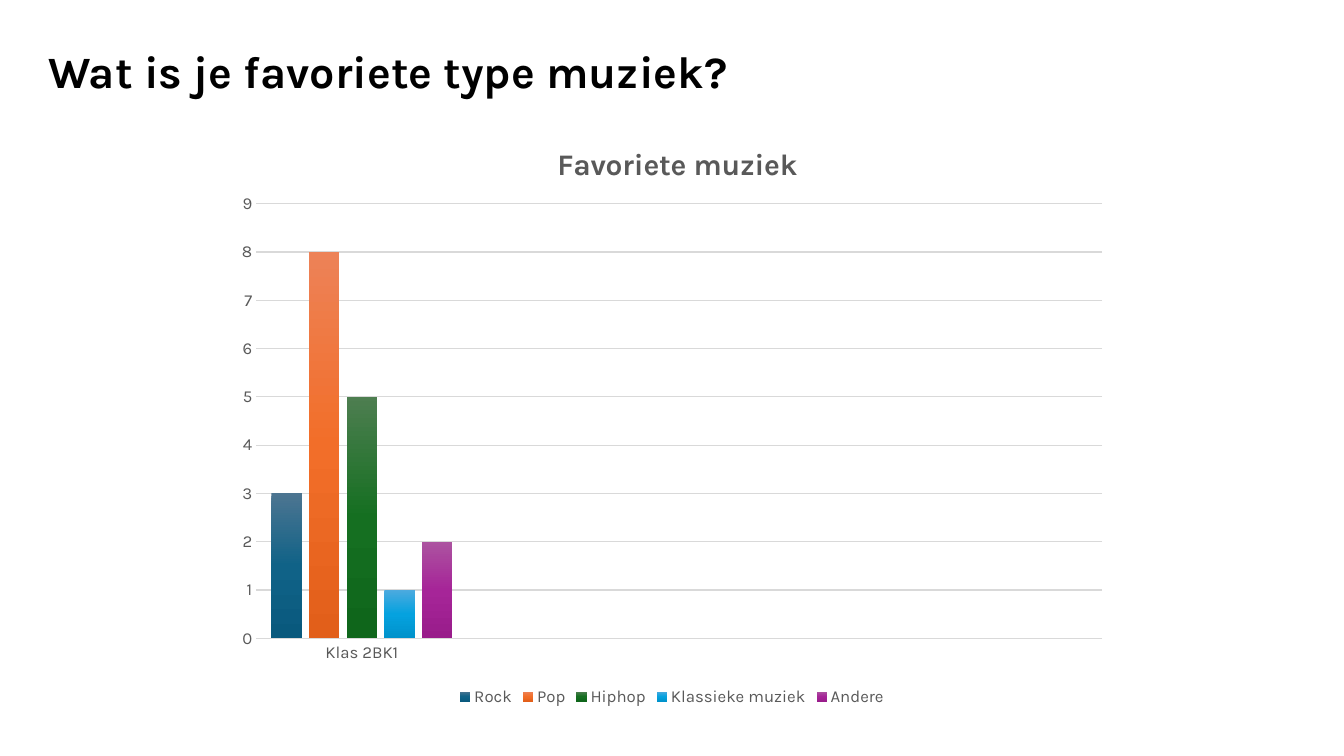
from dataclasses import dataclass
from copy import deepcopy

from lxml.etree import SubElement
from pptx import Presentation
from pptx.chart.data import CategoryChartData
from pptx.dml.color import RGBColor
from pptx.enum.chart import XL_CHART_TYPE, XL_LEGEND_POSITION, XL_TICK_MARK
from pptx.oxml.ns import qn
from pptx.util import Pt

FONT = "Karla"
COLORS = {"background": "FFFFFF", "heading": "000000", "label": "595959", "grid": "D9D9D9"}
CLASSES = ["Klas 2BK1", "", "", ""]


@dataclass(frozen=True)
class Genre:
    name: str
    votes: int
    gradient: tuple[str, str, str]


GENRES = [
    Genre("Rock", 3, ("4C7591", "106287", "09597D")),
    Genre("Pop", 8, ("ED8257", "F26E29", "E25F1A")),
    Genre("Hiphop", 5, ("4D7E50", "156F21", "0F661B")),
    Genre("Klassieke muziek", 1, ("4CAADF", "05A2DF", "0092CB")),
    Genre("Andere", 2, ("AC53A0", "A62598", "991C8B")),
]


def write(frame, text: str, *, size: float, color: str, bold: bool = False) -> None:
    run = frame.paragraphs[0].add_run()
    run.text = text
    style(run.font, size=size, color=color, bold=bold)


def style(font, *, size: float, color: str, bold: bool = False) -> None:
    font.name = FONT
    font.size = Pt(size)
    font.bold = bold
    font.color.rgb = RGBColor.from_string(COLORS[color])


def outline(line, width: float) -> None:
    line.color.rgb = RGBColor.from_string(COLORS["grid"])
    line.width = Pt(width)


def place(element, **settings: object) -> None:
    layout = element.get_or_add_layout() if hasattr(element, "get_or_add_layout") else element.find(qn("c:layout"))
    if layout is None:
        layout = element.makeelement(qn("c:layout"))
        element.insert(0, layout)
    manual = SubElement(layout, qn("c:manualLayout"))
    for tag, value in settings.items():
        SubElement(manual, qn(f"c:{tag}")).set("val", str(value))


def paint(bars, genre: Genre) -> None:
    fill = bars.format.fill
    fill.gradient()
    fill.gradient_angle = 270
    stops = bars.format.fill.gradient_stops
    first = next(bars._element.iter(qn("a:gs")))
    first.addnext(deepcopy(first))
    stops = fill.gradient_stops
    for index, (stop, color) in enumerate(zip(stops, genre.gradient)):
        stop.position = index / 2
        stop.color.rgb = RGBColor.from_string(color)


def add_music_chart(slide) -> None:
    votes = CategoryChartData(number_format="General")
    votes.categories = CLASSES
    for genre in GENRES:
        votes.add_series(genre.name, [genre.votes, None, None, None])
    chart = slide.shapes.add_chart(
        XL_CHART_TYPE.COLUMN_CLUSTERED, Pt(160), Pt(80.64), Pt(640), Pt(427), votes
    ).chart
    style(chart.font, size=12, color="label")

    chart.has_title = True
    write(chart.chart_title.text_frame, "Favoriete muziek", size=21.3, color="label", bold=True)
    chart.chart_title.include_in_layout = False
    place(chart.chart_title._element, xMode="edge", yMode="edge", x=0.366, y=0.044)
    place(
        chart._chartSpace.chart.plotArea,
        layoutTarget="inner", xMode="edge", yMode="edge", x=0.036, y=0.152, w=0.944, h=0.727,
    )

    chart.has_legend = True
    chart.legend.position = XL_LEGEND_POSITION.BOTTOM
    chart.legend.include_in_layout = False
    style(chart.legend.font, size=12, color="label")

    for axis in (chart.category_axis, chart.value_axis):
        axis.major_tick_mark = axis.minor_tick_mark = XL_TICK_MARK.NONE
        style(axis.tick_labels.font, size=12, color="label")
    outline(chart.category_axis.format.line, 1)
    counts = chart.value_axis
    counts.minimum_scale, counts.maximum_scale, counts.major_unit = 0, 9, 1
    counts.format.line.fill.background()
    outline(counts.major_gridlines.format.line, 0.75)

    columns = chart.plots[0]
    columns.gap_width = 100
    columns.overlap = -24
    columns.vary_by_categories = False
    for bars, genre in zip(columns.series, GENRES):
        paint(bars, genre)


def main() -> None:
    presentation = Presentation()
    presentation.slide_width, presentation.slide_height = Pt(960), Pt(540)
    slide = presentation.slides.add_slide(presentation.slide_layouts[6])
    slide.background.fill.solid()
    slide.background.fill.fore_color.rgb = RGBColor.from_string(COLORS["background"])
    add_music_chart(slide)
    question = slide.shapes.add_textbox(Pt(27.36), Pt(27.36), Pt(556.56), Pt(46.08)).text_frame
    question.word_wrap = True
    write(question, "Wat is je favoriete type muziek?", size=32, color="heading", bold=True)
    presentation.save("out.pptx")


if __name__ == "__main__":
    main()
